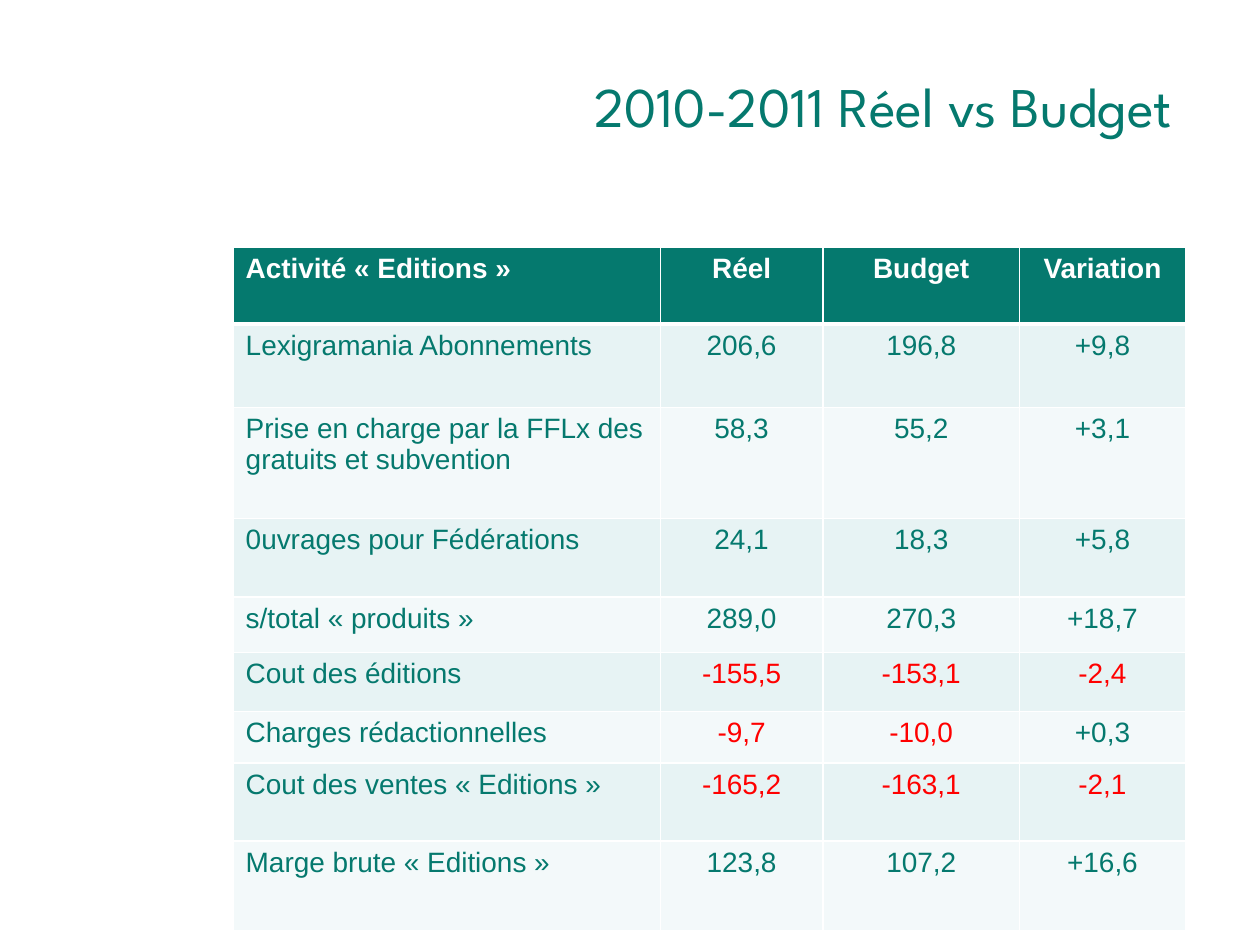
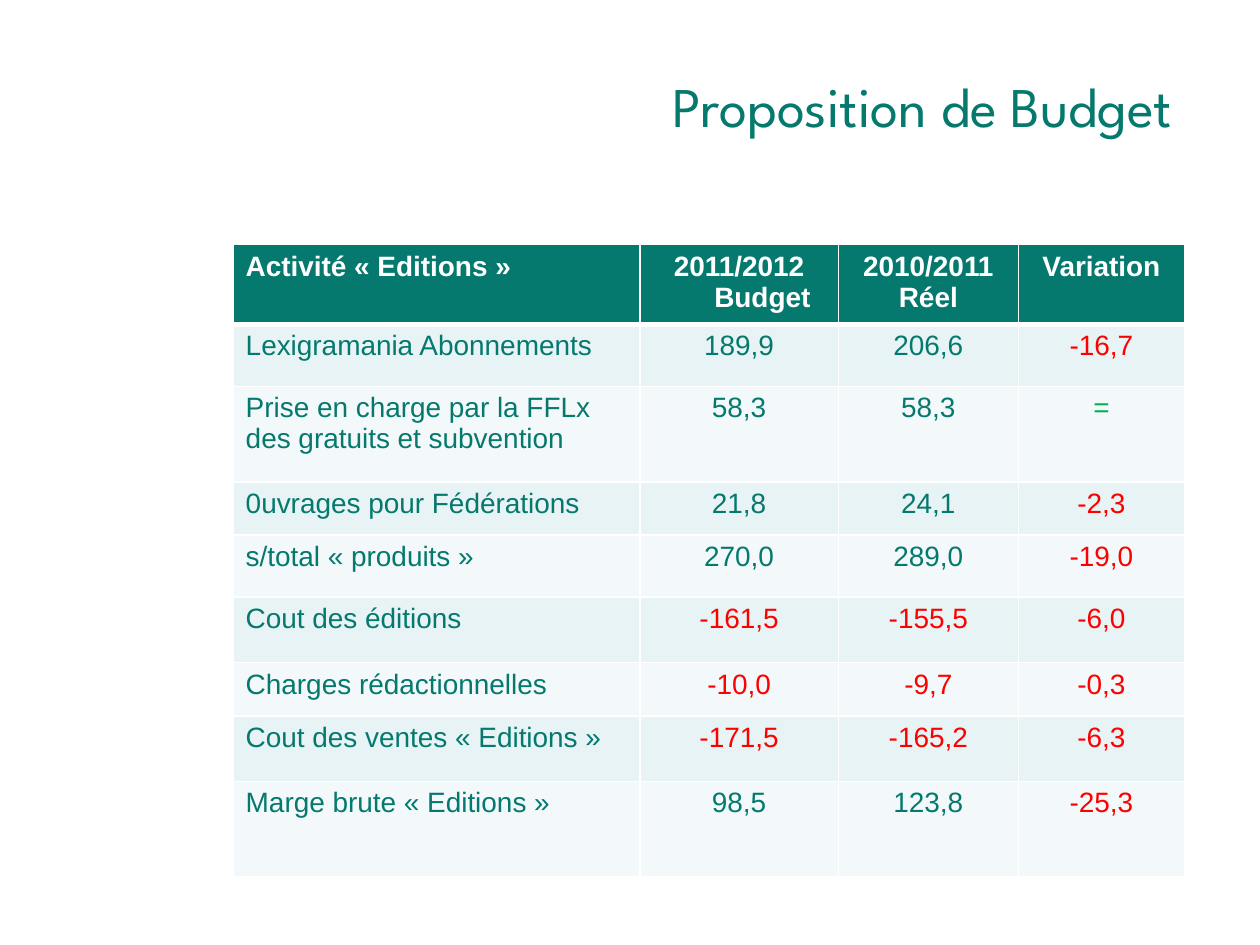
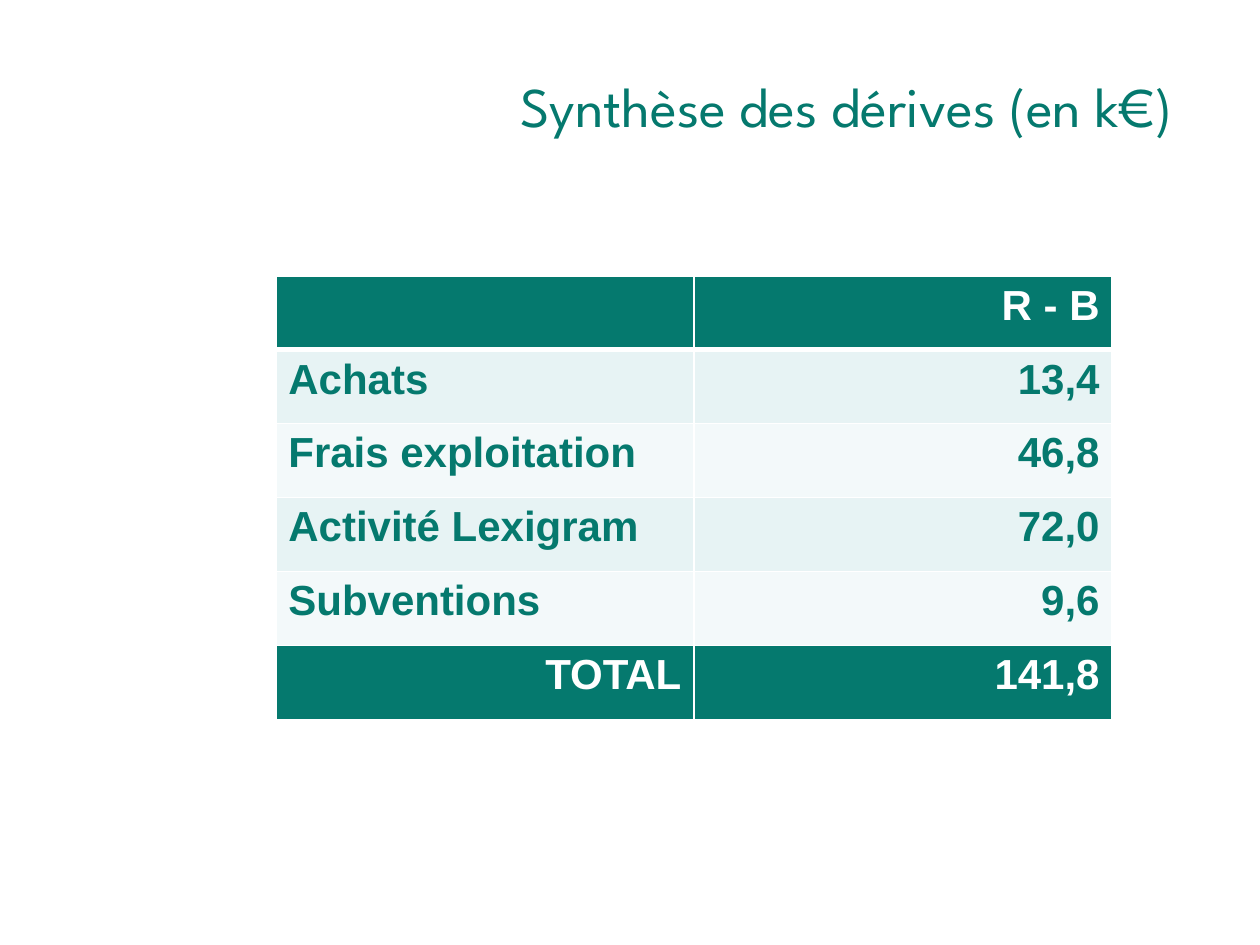
from dataclasses import dataclass
from typing import NamedTuple

from lxml.etree import SubElement
from pptx import Presentation
from pptx.dml.color import RGBColor as Rgb
from pptx.enum.text import MSO_ANCHOR as Anchor, PP_ALIGN as Align
from pptx.oxml.ns import qn
from pptx.util import Cm, Pt


# Theme
@dataclass(frozen=True)
class Theme:
    green: str = "05796E"
    white: str = "FFFFFF"
    band_dark: str = "E7F3F4"
    band_light: str = "F3F9FA"
    loss: str = "FF0000"
    unchanged: str = "00B050"
    title_font: str = "League Spartan"
    body_font: str = "Arial"
    title_size: int = 32
    accounts_size: int = 16
    summary_size: int = 24
    rule_width: float = 1
    header_rule_width: float = 3


THEME = Theme()


# Content model
class Line(NamedTuple):
    text: str
    indent: float = 0


Entry = str | tuple[Line, ...]
Row = tuple[Entry, ...]


@dataclass(frozen=True)
class FinanceTable:
    left: float
    top: float
    columns: tuple[float, ...]
    heights: tuple[float, ...]
    rows: list[Row]
    size: int = THEME.accounts_size
    figures_align: Align = Align.CENTER
    bold: bool = False
    has_total: bool = False


class Page(NamedTuple):
    title: str
    table: FinanceTable


# Drawing
def write_line(paragraph, line: Line, font: str, size: int, color: str,
               align: Align, bold: bool = False) -> None:
    paragraph.alignment = align
    if line.indent:
        paragraph._p.get_or_add_pPr().set("marL", str(Cm(line.indent)))
    if not line.text:
        return
    run = paragraph.add_run()
    run.text = line.text
    run.font.name = font
    run.font.size = Pt(size)
    run.font.bold = bold
    run.font.color.rgb = Rgb.from_string(color)


def add_title(slide, title: str) -> None:
    frame = slide.shapes.add_textbox(Cm(0), Cm(1.32), Cm(23.9), Cm(1.6)).text_frame
    frame.word_wrap = True
    frame.vertical_anchor = Anchor.MIDDLE
    write_line(frame.paragraphs[0], Line(title), THEME.title_font,
               THEME.title_size, THEME.green, Align.RIGHT)


def add_borders(cell, row_index: int) -> None:
    properties = cell._tc.get_or_add_tcPr()
    heavy_side = {0: "lnB", 1: "lnT"}.get(row_index)
    for side in ("lnL", "lnR", "lnT", "lnB"):
        width = THEME.header_rule_width if side == heavy_side else THEME.rule_width
        rule = SubElement(properties, qn(f"a:{side}"), w=str(Pt(width)))
        fill = SubElement(rule, qn("a:solidFill"))
        SubElement(fill, qn("a:srgbClr"), val=THEME.white)


def figure_color(text: str) -> str:
    return {"-": THEME.loss, "=": THEME.unchanged}.get(text[:1], THEME.green)


def fill_cell(cell, entry: Entry, row_index: int, column_index: int,
              finance: FinanceTable) -> None:
    is_header = row_index == 0
    is_total = finance.has_total and row_index == len(finance.rows) - 1
    on_green = is_header or is_total
    band = THEME.band_dark if row_index % 2 else THEME.band_light

    add_borders(cell, row_index)
    cell.fill.solid()
    cell.fill.fore_color.rgb = Rgb.from_string(THEME.green if on_green else band)

    align = finance.figures_align if column_index or is_total else Align.LEFT
    lines = (Line(entry),) if isinstance(entry, str) else entry
    frame = cell.text_frame
    for index, line in enumerate(lines):
        paragraph = frame.add_paragraph() if index else frame.paragraphs[0]
        color = THEME.white if on_green else figure_color(line.text)
        write_line(paragraph, line, THEME.body_font, finance.size, color, align,
                   bold=finance.bold or is_header)


def add_finance_table(slide, finance: FinanceTable) -> None:
    table = slide.shapes.add_table(
        len(finance.rows), len(finance.columns), Cm(finance.left), Cm(finance.top),
        Cm(sum(finance.columns)), Cm(sum(finance.heights))).table
    table.horz_banding = False
    for column, width in zip(table.columns, finance.columns):
        column.width = Cm(width)
    for row, height in zip(table.rows, finance.heights):
        row.height = Cm(height)
    for row_index, row in enumerate(finance.rows):
        for column_index, entry in enumerate(row):
            fill_cell(table.cell(row_index, column_index), entry,
                      row_index, column_index, finance)


# Content
ACCOUNTS = (
    "Activité « Editions »",
    "Lexigramania Abonnements",
    "Prise en charge par la FFLx des gratuits et subvention",
    "0uvrages pour Fédérations",
    "s/total « produits »",
    "Cout des éditions",
    "Charges rédactionnelles",
    "Cout des ventes « Editions »",
    "Marge brute « Editions »",
)


def with_accounts(figures: list[Row]) -> list[Row]:
    return [(account, *row) for account, row in zip(ACCOUNTS, figures)]


ACTUAL_VS_BUDGET = FinanceTable(
    left=4.7, top=4.98,
    columns=(8.61, 3.28, 3.96, 3.35),
    heights=(1.55, 1.68, 2.24, 1.58, 1.12, 1.19, 1.04, 1.57, 1.82),
    rows=with_accounts([
        ("Réel", "Budget", "Variation"),
        ("206,6", "196,8", "+9,8"),
        ("58,3", "55,2", "+3,1"),
        ("24,1", "18,3", "+5,8"),
        ("289,0", "270,3", "+18,7"),
        ("-155,5", "-153,1", "-2,4"),
        ("-9,7", "-10,0", "+0,3"),
        ("-165,2", "-163,1", "-2,1"),
        ("123,8", "107,2", "+16,6"),
    ]),
)

BUDGET_PROPOSAL = FinanceTable(
    left=4.7, top=4.93,
    columns=(8.2, 4, 3.63, 3.35),
    heights=(1.5, 1.25, 1.93, 1.07, 1.25, 1.32, 1.07, 1.32, 1.93),
    rows=with_accounts([
        ((Line("2011/2012"), Line("Budget", indent=0.94)),
         (Line("2010/2011"), Line("Réel")), "Variation"),
        ("189,9", "206,6", "-16,7"),
        ("58,3", "58,3", "="),
        ("21,8", "24,1", "-2,3"),
        ("270,0", "289,0", "-19,0"),
        ("-161,5", "-155,5", "-6,0"),
        ("-10,0", "-9,7", "-0,3"),
        ("-171,5", "-165,2", "-6,3"),
        ("98,5", "123,8", "-25,3"),
    ]),
)

DRIFT_SUMMARY = FinanceTable(
    left=5.56, top=5.56,
    columns=(8.43,) * 2,
    heights=(1.49,) * 6,
    rows=[
        ("", "R - B"),
        ("Achats", "13,4"),
        ("Frais exploitation", "46,8"),
        ("Activité Lexigram", "72,0"),
        ("Subventions", "9,6"),
        ("TOTAL", "141,8"),
    ],
    size=THEME.summary_size, figures_align=Align.RIGHT, bold=True, has_total=True,
)

PAGES = (
    Page("2010-2011 Réel vs Budget", ACTUAL_VS_BUDGET),
    Page("Proposition de Budget", BUDGET_PROPOSAL),
    Page("Synthèse des dérives (en k€)", DRIFT_SUMMARY),
)


def main() -> None:
    deck = Presentation()
    deck.slide_width, deck.slide_height = Cm(25.4), Cm(19.05)
    blank = deck.slide_layouts[6]
    for page in PAGES:
        slide = deck.slides.add_slide(blank)
        add_title(slide, page.title)
        add_finance_table(slide, page.table)
    deck.save("out.pptx")


if __name__ == "__main__":
    main()
